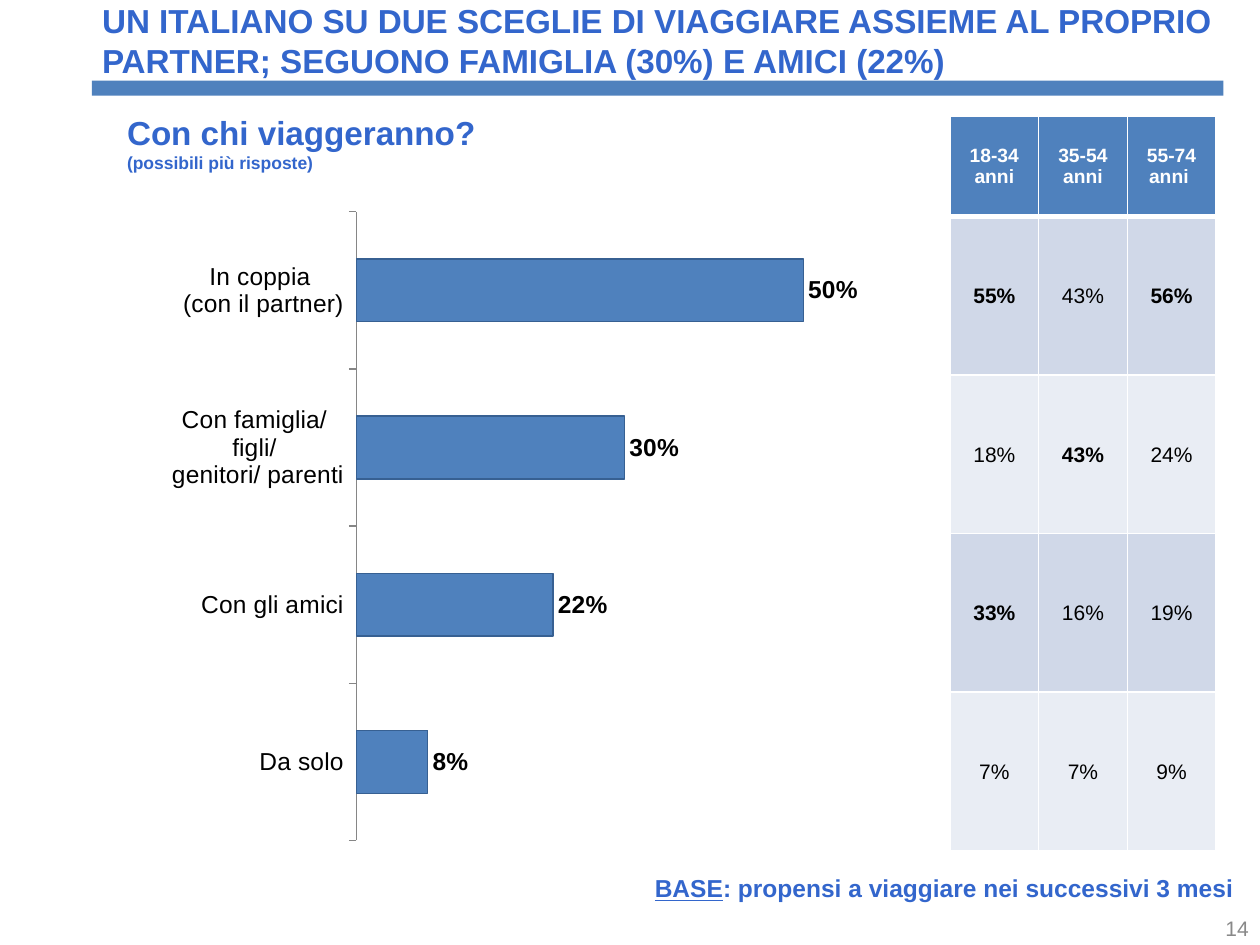
from dataclasses import dataclass

from lxml.etree import SubElement
from pptx import Presentation
from pptx.chart.data import CategoryChartData
from pptx.dml.color import RGBColor as Color
from pptx.enum.chart import (XL_CHART_TYPE as ChartType, XL_LABEL_POSITION as LabelAt,
                             XL_TICK_MARK as Tick)
from pptx.enum.shapes import MSO_SHAPE as Shape
from pptx.enum.text import MSO_ANCHOR as Anchor, MSO_AUTO_SIZE as AutoSize, PP_ALIGN as Align
from pptx.oxml.ns import qn
from pptx.util import Inches, Pt


@dataclass(frozen=True)
class Theme:
    font: str = "Arial"
    heading: str = "3366CC"
    accent: str = "4F81BD"
    outline: str = "376092"
    axis: str = "868686"
    number: str = "898989"
    ink: str = "000000"
    paper: str = "FFFFFF"
    bands: tuple = ("D0D8E8", "E9EDF4")
    title_size: float = 19
    label_size: float = 14
    cell_size: float = 12
    header_size: float = 11
    small_size: float = 10


THEME = Theme()

AGES = ("18-34 anni", "35-54 anni", "55-74 anni ")
# Company, share of all, share by age group, age columns in bold
ANSWERS = (
    ("In coppia \n(con il partner)", 0.50, (55, 43, 56), (0, 2)),
    ("Con famiglia/ \nfigli/ \ngenitori/ parenti", 0.30, (18, 43, 24), (1,)),
    ("Con gli amici", 0.22, (33, 16, 19), (0,)),
    ("Da solo", 0.08, (7, 7, 9), ()),
)


def inches(*lengths):
    return [Inches(length) for length in lengths]


def set_font(font, size, color=THEME.heading, bold=True):
    font.name, font.size, font.bold = THEME.font, Pt(size), bold
    font.color.rgb = Color.from_string(color)


def paint(fill, color):
    fill.solid()
    fill.fore_color.rgb = Color.from_string(color)


def add_text_box(page, box, align=Align.LEFT, anchor=Anchor.TOP):
    frame = page.shapes.add_textbox(*inches(*box)).text_frame
    frame.word_wrap = True
    frame.vertical_anchor = anchor
    para = frame.paragraphs[0]
    para.alignment = align
    return para


def add_header(page, box, rule_box):
    # Title
    title = page.shapes.title
    title.left, title.top, title.width, title.height = inches(*box)
    frame = title.text_frame
    frame.text = ("UN ITALIANO SU DUE SCEGLIE DI VIAGGIARE ASSIEME AL PROPRIO PARTNER; "
                  "SEGUONO FAMIGLIA (30%) E AMICI (22%)")
    frame.auto_size = AutoSize.NONE
    frame.vertical_anchor = Anchor.TOP
    para = frame.paragraphs[0]
    para.alignment = Align.LEFT
    set_font(para.font, THEME.title_size)
    # Rule under the title
    rule = page.shapes.add_shape(Shape.RECTANGLE, *inches(*rule_box))
    rule.shadow.inherit = False
    paint(rule.fill, THEME.accent)
    rule.line.fill.background()


def add_question(page, box):
    para = add_text_box(page, box)
    set_font(para.font, THEME.title_size)
    para.add_run().text = "Con chi viaggeranno?"
    para.add_line_break()
    hint = para.add_run()
    hint.text = "(possibili più risposte)"
    hint.font.size = Pt(THEME.small_size)


def set_plot_area(chart, **shares):
    plot_area = chart.plots[0]._element.getparent()
    for old in plot_area.findall(qn("c:layout")):
        plot_area.remove(old)
    layout = SubElement(plot_area, qn("c:layout"))
    plot_area.insert(0, layout)
    manual = SubElement(layout, qn("c:manualLayout"))
    settings = {"layoutTarget": "inner", "xMode": "edge", "yMode": "edge", **shares}
    for name, value in settings.items():
        SubElement(manual, qn(f"c:{name}")).set("val", str(value))


def add_answer_chart(page, box):
    data = CategoryChartData(number_format="#,##0%")
    data.categories = [answer[0] for answer in ANSWERS]
    data.add_series("Series 1", [answer[1] for answer in ANSWERS])
    chart = page.shapes.add_chart(ChartType.BAR_CLUSTERED, *inches(*box), data).chart
    chart.has_legend = chart.has_title = False
    set_font(chart.font, 18, THEME.ink, False)
    set_plot_area(chart, x=0.451, y=0.067, w=0.525, h=0.899)

    # Axes
    categories = chart.category_axis
    categories.reverse_order = True
    categories.major_tick_mark = Tick.OUTSIDE
    categories.format.line.color.rgb = Color.from_string(THEME.axis)
    set_font(categories.tick_labels.font, THEME.label_size, THEME.ink, False)
    values = chart.value_axis
    values.visible = values.has_major_gridlines = False
    values.minimum_scale, values.maximum_scale = 0, 0.6

    # Bars and their labels
    plot = chart.plots[0]
    plot.gap_width = 150
    plot.vary_by_categories = False
    bars = plot.series[0].format
    paint(bars.fill, THEME.accent)
    bars.line.color.rgb = Color.from_string(THEME.outline)
    bars.line.width = Pt(0.75)
    plot.has_data_labels = True
    labels = plot.data_labels
    labels.show_value = True
    labels.position = LabelAt.OUTSIDE_END
    labels.number_format, labels.number_format_is_linked = "#,##0%", False
    set_font(labels.font, THEME.label_size, THEME.ink)


def set_borders(cell, bottom):
    properties = cell._tc.get_or_add_tcPr()
    widths = {"lnL": 1, "lnR": 1, "lnT": 1, "lnB": bottom}
    for position, (side, width) in enumerate(widths.items()):
        line = SubElement(properties, qn(f"a:{side}"), w=str(Pt(width)))
        SubElement(SubElement(line, qn("a:solidFill")), qn("a:srgbClr"), val=THEME.paper)
        properties.insert(position, line)


def fill_cell(cell, text, fill, size, color, bold, bottom=1):
    cell.text = text
    cell.vertical_anchor = Anchor.MIDDLE
    para = cell.text_frame.paragraphs[0]
    para.alignment = Align.CENTER
    set_font(para.font, size, color, bold)
    paint(cell.fill, fill)
    set_borders(cell, bottom)


def add_age_table(page, box, header_height=0.8):
    left, top, width, height = box
    table = page.shapes.add_table(len(ANSWERS) + 1, len(AGES), *inches(*box)).table
    for column in table.columns:
        column.width = Inches(width / len(AGES))
    for row in table.rows:
        row.height = Inches((height - header_height) / len(ANSWERS))
    table.rows[0].height = Inches(header_height)

    for column, age in enumerate(AGES):
        fill_cell(table.cell(0, column), age, THEME.accent, THEME.header_size,
                  THEME.paper, True, bottom=3)
    for row, (_, _, shares, strong) in enumerate(ANSWERS):
        for column, share in enumerate(shares):
            cell = table.cell(row + 1, column)
            cell.margin_left = cell.margin_right = cell.margin_top = Inches(0.01)
            cell.margin_bottom = 0
            fill_cell(cell, f"{share}%", THEME.bands[row % 2], THEME.cell_size,
                      THEME.ink, column in strong)


def add_footer(page, base_box, number_box):
    # Survey base
    para = add_text_box(page, base_box, Align.RIGHT)
    set_font(para.font, THEME.label_size)
    base = para.add_run()
    base.text = "BASE"
    base.font.underline = True
    para.add_run().text = ": propensi a viaggiare nei successivi 3 mesi"
    # Page number
    number = add_text_box(page, number_box, Align.RIGHT, Anchor.MIDDLE)
    number.text = "14"
    set_font(number.font, THEME.cell_size, THEME.number, False)


def main():
    deck = Presentation()
    deck.slide_width, deck.slide_height = inches(10, 7.5)
    page = deck.slides.add_slide(deck.slide_layouts[5])
    add_answer_chart(page, (-0.83, 1.31, 8.11, 5.55))
    add_header(page, (0.71, -0.05, 9.29, 0.74), (0.73, 0.64, 8.98, 0.12))
    add_question(page, (0.91, 0.84, 4.02, 0.59))
    add_age_table(page, (7.54, 0.92, 2.11, 5.83))
    add_footer(page, (4.69, 6.88, 5.2, 0.34), (7.68, 7.29, 2.33, 0.16))
    deck.save("out.pptx")


if __name__ == "__main__":
    main()
